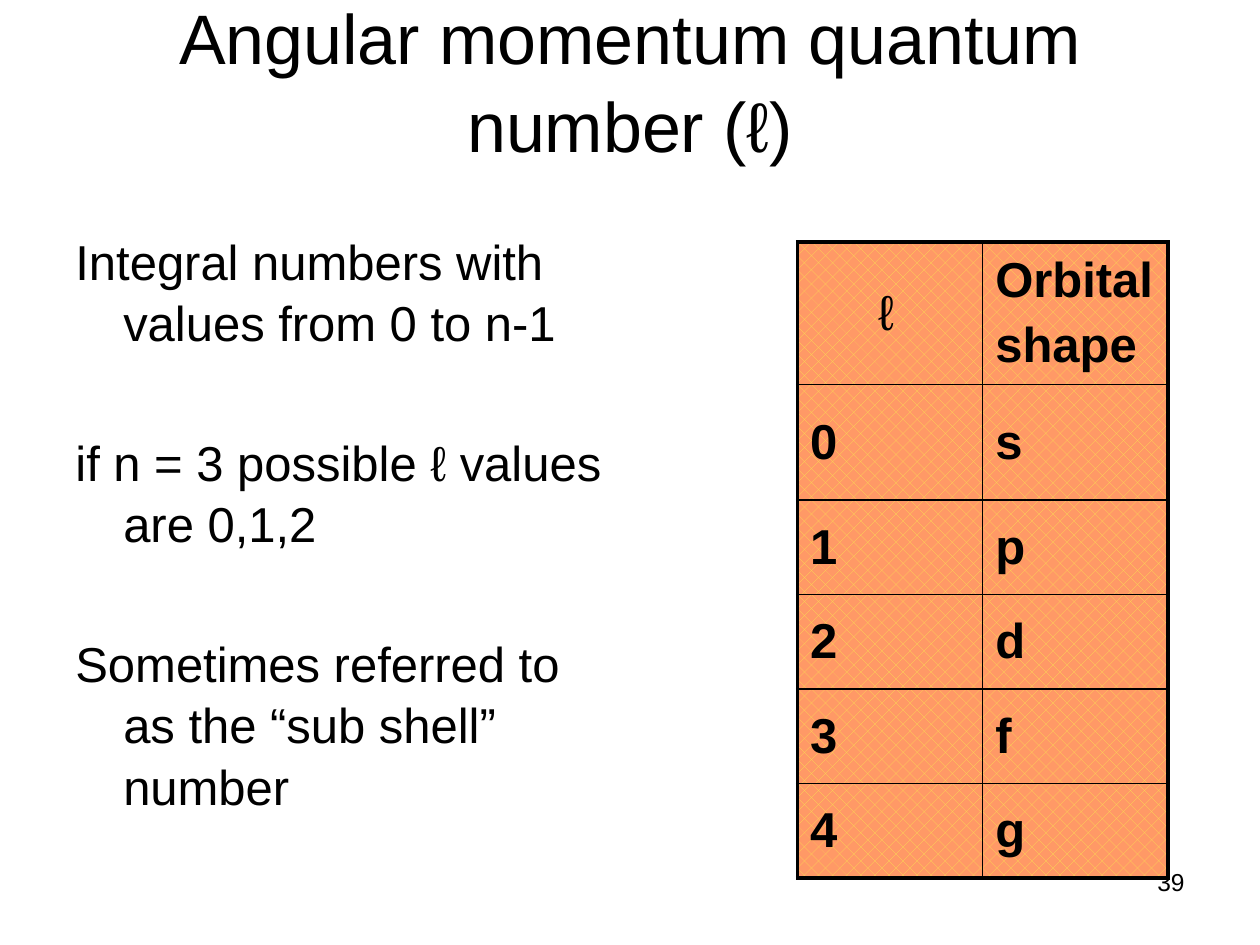
from lxml.etree import SubElement
from pptx import Presentation
from pptx.dml.color import RGBColor
from pptx.enum.dml import MSO_PATTERN
from pptx.enum.text import MSO_ANCHOR as Anchor, PP_ALIGN as Align
from pptx.oxml.ns import qn
from pptx.util import Inches, Pt

BLACK = RGBColor(0x00, 0x00, 0x00)
ORANGE = RGBColor(0xFF, 0x99, 0x66)
YELLOW = RGBColor(0xFB, 0xDF, 0x53)
THICK, THIN = Pt(2.25), Pt(1)

presentation = Presentation()
presentation.slide_width = Inches(10)
presentation.slide_height = Inches(7.5)
slide = presentation.slides.add_slide(presentation.slide_layouts[6])


def write(frame, *lines, size=28, bold=False, align=Align.LEFT, anchor=Anchor.TOP,
          gap=0, spacing=None, hanging=0):
    """Fill a text frame, one paragraph a line, with gap points between paragraphs."""
    frame.word_wrap = True
    frame.vertical_anchor = anchor
    for index, line in enumerate(lines):
        paragraph = frame.add_paragraph() if index else frame.paragraphs[0]
        paragraph.alignment = align
        paragraph.space_before = Pt(gap if index else 0)
        paragraph.line_spacing = spacing
        if hanging:
            properties = paragraph._p.get_or_add_pPr()
            properties.set("marL", str(Inches(hanging)))
            properties.set("indent", str(-Inches(hanging)))
        run = paragraph.add_run()
        run.text = line
        run.font.name = "Arial"
        run.font.size = Pt(size)
        run.font.bold = bold
        run.font.color.rgb = BLACK


def set_borders(cell, **widths):
    """Draw black cell borders, given in the order lnL, lnR, lnT, lnB."""
    properties = cell._tc.get_or_add_tcPr()
    for index, (side, width) in enumerate(widths.items()):
        line = SubElement(properties, qn(f"a:{side}"), w=str(width))
        fill = SubElement(line, qn("a:solidFill"))
        SubElement(fill, qn("a:srgbClr"), val=str(BLACK))
        properties.insert(index, line)


# Page number, title and body
number_box = slide.shapes.add_textbox(Inches(7.17), Inches(6.83), Inches(2.33), Inches(0.52))
write(number_box.text_frame, "39", size=14, align=Align.RIGHT)

title_box = slide.shapes.add_textbox(Inches(0.5), 0, Inches(9), Inches(1.25))
write(title_box.text_frame, "Angular momentum quantum number (ℓ)",
      size=40, align=Align.CENTER, anchor=Anchor.MIDDLE, spacing=1.04)

body_box = slide.shapes.add_textbox(Inches(0.5), Inches(1.77), Inches(4.42), Inches(4.95))
write(body_box.text_frame,
      "Integral numbers with values from 0 to n-1",
      "if n = 3 possible ℓ values are 0,1,2",
      "Sometimes referred to as the “sub shell” number",
      gap=45, spacing=1.04, hanging=0.38)

# Table of orbital shapes
rows = [("ℓ", "Orbital\nshape")] + [(str(value), shape) for value, shape in enumerate("spdfg")]
row_heights = [1.13, 0.92] + [0.75] * 4
column_width = 1.47
table = slide.shapes.add_table(
    len(rows), 2, Inches(6.33), Inches(1.92),
    Inches(2 * column_width), Inches(sum(row_heights))).table
table.first_row = table.horz_banding = False
for column in table.columns:
    column.width = Inches(column_width)

for row_index, (texts, height) in enumerate(zip(rows, row_heights)):
    table.rows[row_index].height = Inches(height)
    for column_index, text in enumerate(texts):
        cell = table.cell(row_index, column_index)
        cell.vertical_anchor = Anchor.MIDDLE
        write(cell.text_frame, *text.split("\n"), bold=text != "ℓ",
              anchor=Anchor.MIDDLE, gap=5.6)
        cell.fill.patterned()
        cell.fill.pattern = MSO_PATTERN.PERCENT_25
        cell.fill.fore_color.rgb = YELLOW
        cell.fill.back_color.rgb = ORANGE
        set_borders(cell,
                    lnL=THICK if column_index == 0 else THIN,
                    lnR=THICK if column_index == 1 else THIN,
                    lnT=THICK if row_index == 0 else THIN,
                    lnB=THICK if row_index == len(rows) - 1 else THIN)
table.cell(0, 0).margin_left = Inches(0.64)

presentation.save("out.pptx")
